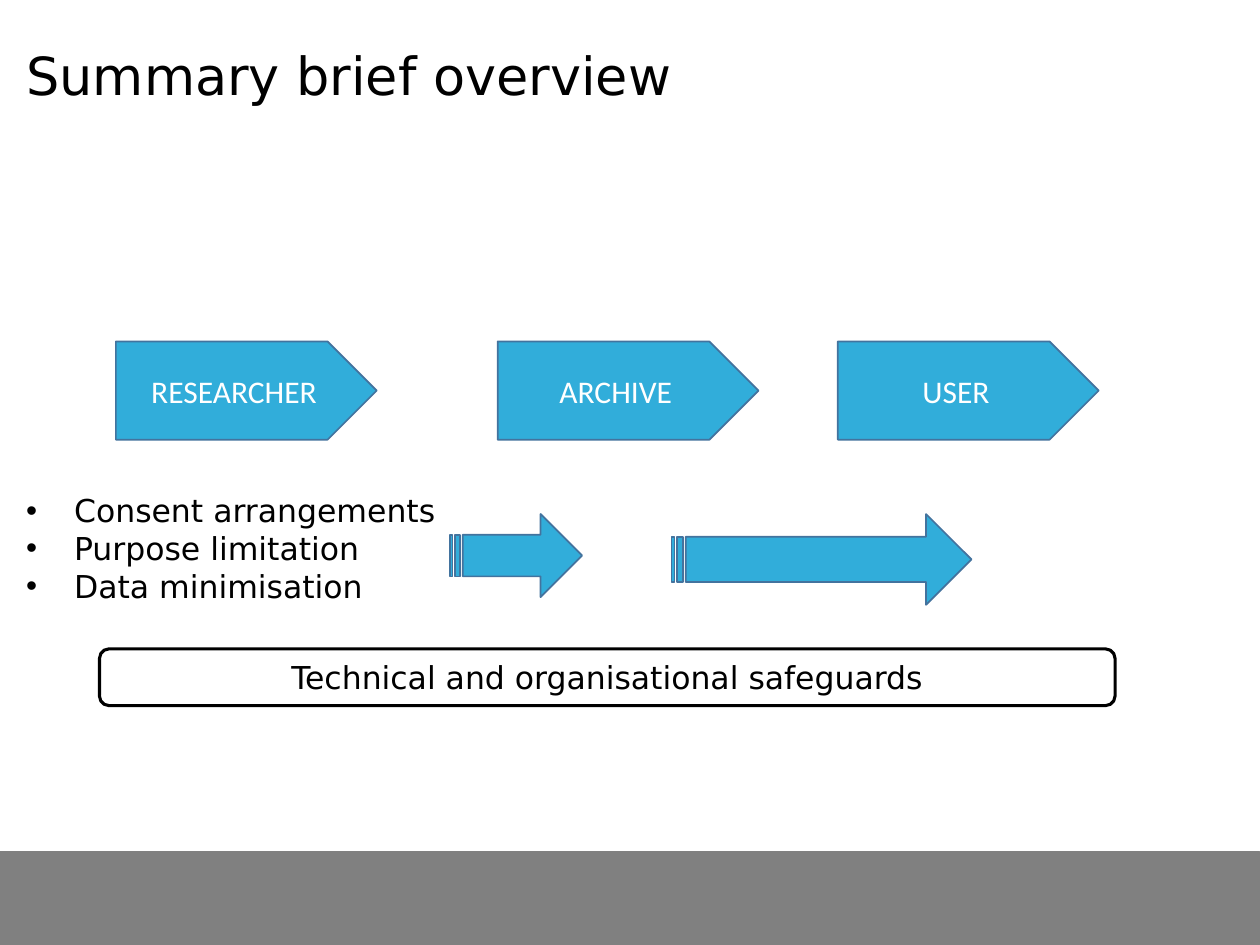
import pptx
import pptx.util
import pptx.dml.color
import pptx.enum.shapes
import pptx.enum.text
from lxml import etree

TITLE = "Summary brief overview"
DUTIES = ["Consent arrangements", "Purpose limitation", "Data minimisation"]
SAFEGUARDS = "Technical and organisational safeguards"
ROLES = [("RESEARCHER", 0.92), ("ARCHIVE", 3.95), ("USER", 6.65)]  # text, left
FLOWS = [(3.57, 1.05, 0.66), (5.33, 2.38, 0.72)]  # left, width, height

WIDTH, HEIGHT = 10, 7.5
MARGIN = 0.11
ROLE_TOP, ROLE_WIDTH, ROLE_HEIGHT = 2.71, 2.07, 0.78
FLOW_TOP = 4.08
FOOTER_HEIGHT = 0.74
INDENT = 0.38
BODY_FONT, ROLE_FONT = "DejaVu Sans", "Calibri"
BLUE, BLUE_EDGE, GREY, BLACK, WHITE = "31ADDA", "43739E", "808080", "000000", "FFFFFF"

SHAPES = pptx.enum.shapes.MSO_SHAPE
ALIGN = pptx.enum.text.PP_ALIGN
MIDDLE = pptx.enum.text.MSO_ANCHOR.MIDDLE


def color(value):
    return pptx.dml.color.RGBColor.from_string(value)


def inches(*values):
    return [pptx.util.Inches(value) for value in values]


def style(para, size, font=BODY_FONT, ink=BLACK, align=ALIGN.LEFT):
    para.alignment = align
    para.font.size = pptx.util.Pt(size)
    para.font.name = font
    para.font.color.rgb = color(ink)


def add_shape(slide, kind, place, fill, edge, weight):
    shape = slide.shapes.add_shape(kind, *inches(*place))
    shape.shadow.inherit = False
    if fill:
        shape.fill.solid()
        shape.fill.fore_color.rgb = color(fill)
    else:
        shape.fill.background()
    shape.line.color.rgb = color(edge)
    shape.line.width = pptx.util.Pt(weight)
    return shape


def add_label(shape, text, font, ink):
    frame = shape.text_frame
    frame.vertical_anchor = MIDDLE
    frame.text = text
    style(frame.paragraphs[0], 18, font, ink, ALIGN.CENTER)


def add_bullet(para):
    properties = para._p.get_or_add_pPr()
    indent = pptx.util.Inches(INDENT)
    properties.set("marL", str(indent))
    properties.set("indent", str(-indent))
    namespace = "{http://schemas.openxmlformats.org/drawingml/2006/main}"
    etree.SubElement(properties, namespace + "buFont", typeface="Arial")
    etree.SubElement(properties, namespace + "buChar", char="•")


def add_title(slide):
    title = slide.shapes.title
    title.left, title.top, title.width, title.height = inches(
        MARGIN, 0.17, WIDTH - 2 * MARGIN, 0.9)
    title.text_frame.text = TITLE
    title.text_frame.vertical_anchor = MIDDLE
    para = title.text_frame.paragraphs[0]
    para.line_spacing = 0.9
    style(para, 30)


def add_duties(slide):
    box = slide.shapes.add_textbox(*inches(MARGIN, 3.85, 3.5, 1))
    frame = box.text_frame
    frame.word_wrap = True
    frame.text = "\n".join(DUTIES)
    for para in frame.paragraphs:
        add_bullet(para)
        style(para, 18)


def main():
    deck = pptx.Presentation()
    deck.slide_width, deck.slide_height = inches(WIDTH, HEIGHT)
    slide = deck.slides.add_slide(deck.slide_layouts[5])

    footer = (0, HEIGHT - FOOTER_HEIGHT, WIDTH, FOOTER_HEIGHT)
    add_shape(slide, SHAPES.RECTANGLE, footer, GREY, GREY, 0.5)
    add_title(slide)
    add_duties(slide)
    for text, left in ROLES:
        place = (left, ROLE_TOP, ROLE_WIDTH, ROLE_HEIGHT)
        role = add_shape(slide, SHAPES.PENTAGON, place, BLUE, BLUE_EDGE, 1)
        add_label(role, text, ROLE_FONT, WHITE)
    safeguards = add_shape(slide, SHAPES.ROUNDED_RECTANGLE,
                           (0.79, 5.15, 8.06, 0.45), None, BLACK, 1.75)
    add_label(safeguards, SAFEGUARDS, BODY_FONT, BLACK)
    for left, width, height in FLOWS:
        place = (left, FLOW_TOP, width, height)
        add_shape(slide, SHAPES.STRIPED_RIGHT_ARROW, place, BLUE, BLUE_EDGE, 1)
    deck.save("out.pptx")


if __name__ == "__main__":
    main()
